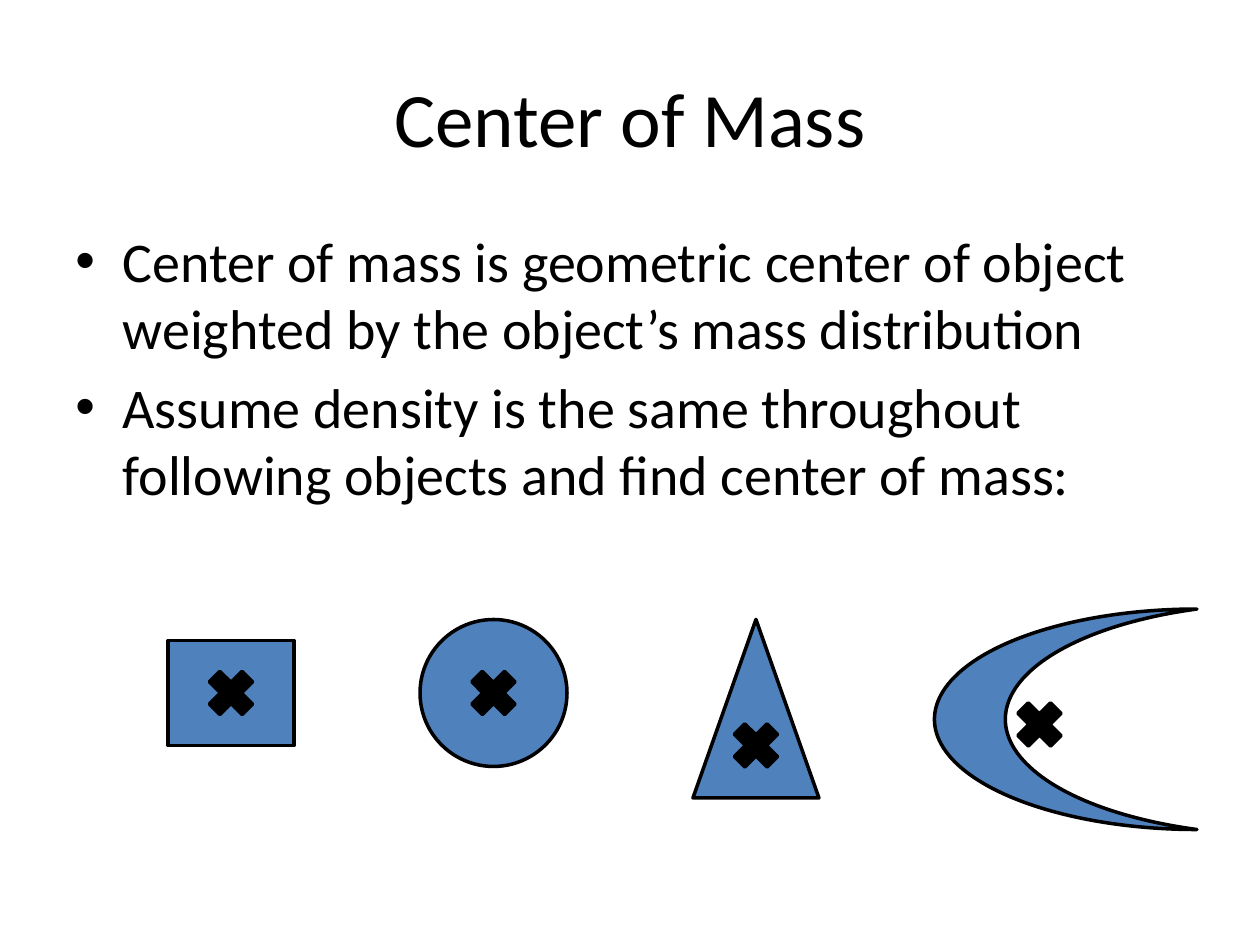
"""Build the Center of Mass slide: two bullets above four shapes with marked centers."""
from lxml.etree import SubElement
from pptx import Presentation
from pptx.dml.color import RGBColor
from pptx.enum.shapes import MSO_SHAPE as Preset
from pptx.enum.text import MSO_ANCHOR as Anchor, PP_ALIGN as Align
from pptx.oxml.ns import qn
from pptx.util import Inches, Pt

COLORS = {"text": "000000", "body": "4F81BD", "mark": "000000", "outline": "000000"}
UNIT = Inches(1) // 12
COLUMNS, ROWS = 120, 90

deck = Presentation()
deck.slide_width, deck.slide_height = COLUMNS * UNIT, ROWS * UNIT
slide = deck.slides.add_slide(deck.slide_layouts[6])


def add_text(column, row, columns, rows, lines, size, anchor):
    box = slide.shapes.add_textbox(*(round(n * UNIT) for n in (column, row, columns, rows)))
    frame = box.text_frame
    frame.word_wrap = True
    frame.vertical_anchor = anchor
    for index, line in enumerate(lines):
        paragraph = frame.add_paragraph() if index else frame.paragraphs[0]
        run = paragraph.add_run()
        run.text = line
        run.font.name = "Calibri"
        run.font.size = Pt(size)
        run.font.color.rgb = RGBColor.from_string(COLORS["text"])
    return frame.paragraphs


def add_figure(preset, column, row, columns, rows, color):
    figure = slide.shapes.add_shape(preset, column * UNIT, row * UNIT, columns * UNIT, rows * UNIT)
    figure.shadow.inherit = False
    figure.fill.solid()
    figure.fill.fore_color.rgb = RGBColor.from_string(COLORS[color])
    figure.line.color.rgb = RGBColor.from_string(COLORS["outline"])
    figure.line.width = Pt(2)
    return figure


title = add_text(6, 3.6, 108, 15, ["Center of Mass"], 44, Anchor.MIDDLE)
title[0].alignment = Align.CENTER

statements = [
    "Center of mass is geometric center of object weighted by the object’s mass distribution",
    "Assume density is the same throughout following objects and find center of mass:",
]
for bullet in add_text(6, 21, 108, 59.4, statements, 32, Anchor.TOP):
    bullet.space_before = Pt(6.4)
    properties = bullet._p.get_or_add_pPr()
    properties.set("marL", str(Inches(0.375)))
    properties.set("indent", str(-Inches(0.375)))
    SubElement(properties, qn("a:buFont")).set("typeface", "Arial")
    SubElement(properties, qn("a:buChar")).set("char", "•")

add_figure(Preset.RECTANGLE, 16, 61, 12, 10, "body")
add_figure(Preset.OVAL, 40, 59, 14, 14, "body")
add_figure(Preset.ISOSCELES_TRIANGLE, 66, 59, 12, 17, "body")
crescent = add_figure(Preset.MOON, 89, 58, 25, 21, "body")
crescent.adjustments[0] = 0.27

for column, row in [(19, 63), (44, 63), (69, 68), (96, 66)]:
    add_figure(Preset.MATH_MULTIPLY, column, row, 6, 6, "mark")

deck.save("out.pptx")
